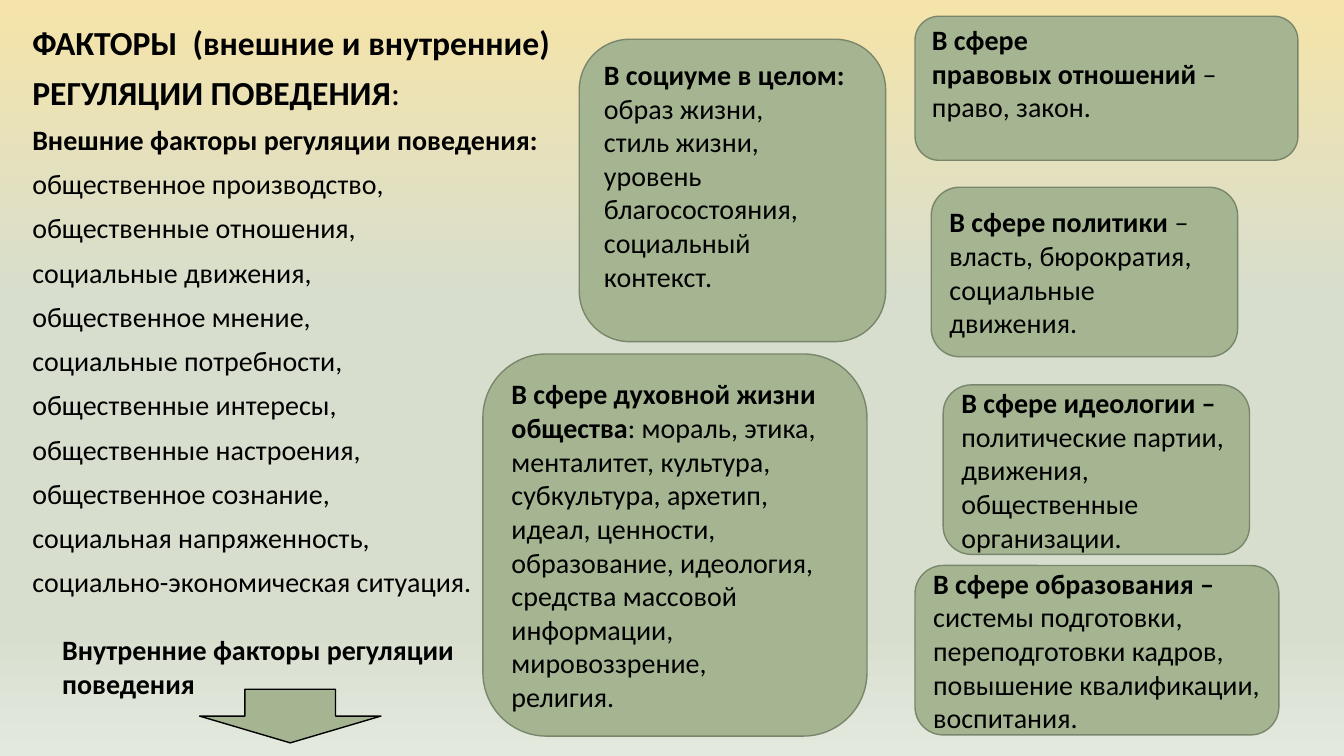
from copy import deepcopy
from dataclasses import dataclass
from typing import NamedTuple

from pptx import Presentation
from pptx import util as u
from pptx.dml.color import RGBColor
from pptx.enum import shapes, text
from pptx.oxml.ns import qn


@dataclass(frozen=True)
class Theme:
    font: str = "Calibri"
    title_size: int = 24
    text_size: int = 20
    ink: str = "000000"
    card: str = "A5B592"
    card_edge: str = "7A866C"
    backdrop: tuple = ((0, "F5E4A9"), (40, "D7DECE"), (83, "D7DECE"), (100, "E4E9DE"))


class Line(NamedTuple):
    bold: str = ""
    plain: str = ""


class Area(NamedTuple):
    left: float
    top: float
    width: float
    height: float

    def lengths(self) -> list:
        return [u.Cm(value) for value in self]


@dataclass(frozen=True)
class Card:
    area: Area
    lines: tuple
    space_below: float = 0
    filled: bool = True


THEME = Theme()
INSET = 0.13
LINE_BELOW = 0.77

TITLE_AREA = Area(0.56, 0.53, 13.9, 2.5)
TITLE = (
    Line("ФАКТОРЫ  (внешние и внутренние)"),
    Line("РЕГУЛЯЦИИ ПОВЕДЕНИЯ", ":"),
)

FACTORS_AREA = Area(0.56, 3.05, 13.9, 12.6)
FACTORS = (
    Line("Внешние факторы регуляции поведения:"),
    Line(plain="общественное производство,"),
    Line(plain="общественные отношения,"),
    Line(plain="социальные движения,"),
    Line(plain="общественное мнение,"),
    Line(plain="социальные потребности,"),
    Line(plain="общественные интересы,"),
    Line(plain="общественные настроения,"),
    Line(plain="общественное сознание,"),
    Line(plain="социальная напряженность,"),
    Line(plain="социально-экономическая ситуация."),
)

CARDS = (
    Card(Area(1.17, 15.67, 12.93, 3.02),
         (Line("Внутренние факторы регуляции поведения"),),
         LINE_BELOW, filled=False),
    Card(Area(14.6, 0.99, 7.72, 7.62),
         (Line("В социуме в целом: ", "образ жизни,"),
          Line(plain="стиль жизни,"),
          Line(plain="уровень благосостояния,"),
          Line(plain="социальный контекст.")),
         LINE_BELOW),
    Card(Area(12.17, 8.92, 9.68, 9.63),
         (Line("В сфере духовной жизни общества",
               ": мораль, этика, менталитет, культура, субкультура, архетип, "
               "идеал, ценности, образование, идеология, средства массовой "
               "информации, мировоззрение,"),
          Line(plain="религия."))),
    Card(Area(23.47, 4.72, 7.72, 4.27),
         (Line("В сфере политики ", "– власть, бюрократия, социальные движения."),)),
    Card(Area(23.06, 0.41, 9.65, 3.63),
         (Line("В сфере"), Line("правовых отношений ", "– право, закон.")),
         LINE_BELOW),
    Card(Area(23.77, 9.7, 7.72, 4.27),
         (Line("В сфере идеологии – ",
               "политические партии, движения, общественные организации."),)),
    Card(Area(23.06, 14.25, 9.17, 4.27),
         (Line("В сфере образования – ",
               "системы подготовки, переподготовки кадров, "
               "повышение квалификации, воспитания."),)),
)

ARROW_AREA = Area(5.03, 17.37, 4.57, 1.35)


def write_lines(frame, lines: tuple, size: int) -> None:
    for index, line in enumerate(lines):
        para = frame.add_paragraph() if index else frame.paragraphs[0]
        para.alignment = text.PP_ALIGN.LEFT
        for words, bold in ((line.bold, True), (line.plain, False)):
            if words:
                span = para.add_run()
                span.text = words
                span.font.name = THEME.font
                span.font.size = u.Pt(size)
                span.font.bold = bold
                span.font.color.rgb = RGBColor.from_string(THEME.ink)


def fill_placeholder(box, area: Area, lines: tuple, size: int) -> None:
    box.left, box.top, box.width, box.height = area.lengths()
    frame = box.text_frame
    frame.word_wrap = True
    frame.auto_size = text.MSO_AUTO_SIZE.NONE
    frame.vertical_anchor = text.MSO_ANCHOR.TOP
    write_lines(frame, lines, size)
    for index, para in enumerate(frame.paragraphs):
        para.line_spacing = 0.9
        para.space_before = u.Pt(10 if index else 0)
        properties = para._p.get_or_add_pPr()
        properties.set("marL", "0")
        properties.set("indent", "0")
        properties.append(properties.makeelement(qn("a:buNone")))


def add_filled_shape(page, kind, area: Area, edge: str):
    box = page.shapes.add_shape(kind, *area.lengths())
    box.shadow.inherit = False
    box.fill.solid()
    box.fill.fore_color.rgb = RGBColor.from_string(THEME.card)
    box.line.color.rgb = RGBColor.from_string(edge)
    box.line.width = u.Pt(1)
    return box


def add_card(page, card: Card) -> None:
    box = add_filled_shape(page, shapes.MSO_SHAPE.ROUNDED_RECTANGLE,
                           card.area, THEME.card_edge)
    if not card.filled:
        box.fill.background()
        box.line.fill.background()
    frame = box.text_frame
    frame.word_wrap = True
    frame.vertical_anchor = text.MSO_ANCHOR.MIDDLE
    frame.margin_top = u.Cm(INSET)
    frame.margin_bottom = u.Cm(INSET + card.space_below)
    write_lines(frame, card.lines, THEME.text_size)


def paint_backdrop(page) -> None:
    fill = page.background.fill
    fill.gradient()
    fill.gradient_angle = 270
    stops = page.element.find(".//" + qn("a:gsLst"))
    while len(stops) < len(THEME.backdrop):
        stops.append(deepcopy(stops[0]))
    for stop, (position, color) in zip(fill.gradient_stops, THEME.backdrop):
        stop.position = position / 100
        stop.color.rgb = RGBColor.from_string(color)


def main() -> None:
    deck = Presentation()
    deck.slide_width, deck.slide_height = u.Cm(33.87), u.Cm(19.05)
    page = deck.slides.add_slide(deck.slide_layouts[1])
    paint_backdrop(page)
    fill_placeholder(page.shapes.title, TITLE_AREA, TITLE, THEME.title_size)
    fill_placeholder(page.placeholders[1], FACTORS_AREA, FACTORS, THEME.text_size)
    for card in CARDS:
        add_card(page, card)
    add_filled_shape(page, shapes.MSO_SHAPE.DOWN_ARROW, ARROW_AREA, THEME.ink)
    deck.save("out.pptx")


if __name__ == "__main__":
    main()
